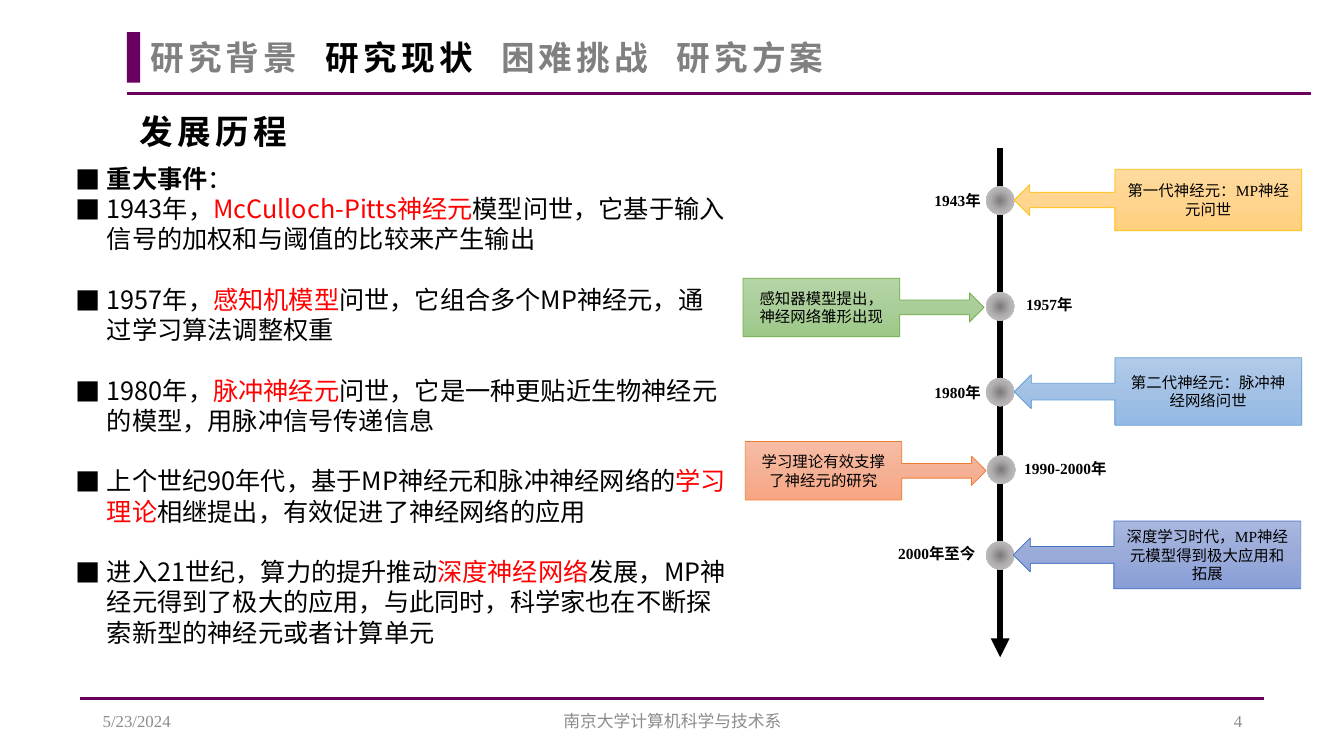
from lxml.etree import SubElement
from pptx import Presentation
from pptx.dml.color import RGBColor
from pptx.enum.shapes import MSO_CONNECTOR, MSO_SHAPE
from pptx.enum.text import MSO_ANCHOR, MSO_AUTO_SIZE, PP_ALIGN
from pptx.oxml import parse_xml
from pptx.oxml.ns import nsdecls, qn
from pptx.util import Emu, Pt

SCALE = 9144  # EMU in one px, at 100 px to the inch
SANS, SERIF = "Noto Sans CJK SC", "Times New Roman"
BLACK, GREY, RED, PLUM = "000000", "808080", "FF0000", "6A0160"
LEFT, MID, RIGHT = PP_ALIGN.LEFT, PP_ALIGN.CENTER, PP_ALIGN.RIGHT

TABS = ["研究背景", "研究现状", "困难挑战", "研究方案"]
ACTIVE = "研究现状"

# Each event: text before, red key words, text after
EVENTS = [
    ("1943年，", "McCulloch-Pitts神经元",
     "模型问世，它基于输入信号的加权和与阈值的比较来产生输出"),
    ("1957年，", "感知机模型", "问世，它组合多个MP神经元，通过学习算法调整权重"),
    ("1980年，", "脉冲神经元",
     "问世，它是一种更贴近生物神经元的模型，用脉冲信号传递信息"),
    ("上个世纪90年代，基于MP神经元和脉冲神经网络的", "学习理论",
     "相继提出，有效促进了神经网络的应用"),
    ("进入21世纪，算力的提升推动", "深度神经网络",
     "发展，MP神经元得到了极大的应用，与此同时，科学家也在不断探索新型的神经元或者计算单元"),
]

# Dot corner, year box, callout side and box, line colour, gradient, words
STAGES = [
    ((978, 185), "1943年", (917, 185, 66), "left", (1006, 168, 285, 61),
     "FFC000", ("FFDB9E", "FFD590", "FFD07C"), "第一代神经元：MP神经元问世"),
    ((978, 290), "1957年", (1008, 288, 66), "right", (737, 276, 239, 58),
     "70AD47", ("B5D5A7", "AACE9A", "9CC987"), "感知器模型提出，神经网络雏形出现"),
    ((978, 375), "1980年", (917, 375, 66), "left", (1006, 355, 285, 67),
     "5B9BD5", ("B1CBE9", "A3C1E5", "93B9E4"), "第二代神经元：脉冲神经网络问世"),
    ((979, 452), "1990-2000年", (1006, 451, 102), "right", (739, 438, 239, 58),
     "ED7D31", ("F7BDA5", "F5B196", "F8A582"), "学习理论有效支撑了神经元的研究"),
    ((978, 537), "2000年至今", (881, 535, 97), "left", (1005, 517, 285, 67),
     "4472C4", ("A8B7DF", "9AABD9", "889ED7"),
     "深度学习时代，MP神经元模型得到极大应用和拓展"),
]
CALLOUTS = {"left": MSO_SHAPE.LEFT_ARROW_CALLOUT,
            "right": MSO_SHAPE.RIGHT_ARROW_CALLOUT}


def px(*nums):
    return [Emu(n * SCALE) for n in nums]


def rgb(code):
    return RGBColor.from_string(code)


def place(shape, box):
    shape.left, shape.top, shape.width, shape.height = px(*box)


def setup(frame, anchor):
    frame.word_wrap = True
    frame.auto_size = MSO_AUTO_SIZE.NONE
    frame.vertical_anchor = anchor


def layout(para, size, align=LEFT, before=0):
    para.alignment = align
    para.line_spacing = Pt(size * 1.2)
    para.space_before = Pt(before)


def add_run(para, text, size, color=BLACK, bold=False, face=SERIF, gap=0):
    run = para.add_run()
    run.text = text
    font = run.font
    font.size, font.bold, font.name = Pt(size), bold, face
    font.color.rgb = rgb(color)
    props = run._r.get_or_add_rPr()
    SubElement(props, qn("a:ea"), typeface=SANS)
    if gap:
        props.set("spc", str(gap * 100))


def add_line(slide, start, end, color, width, arrow=False):
    line = slide.shapes.add_connector(
        MSO_CONNECTOR.STRAIGHT, *px(*start, *end))
    line.line.color.rgb = rgb(color)
    line.line.width = Pt(width)
    props = line._element.spPr
    if arrow:
        SubElement(props.find(qn("a:ln")), qn("a:tailEnd"), type="triangle")
    SubElement(props, qn("a:effectLst"))


def add_box(slide, kind, box):
    """Add a preset shape with no shadow and no line."""
    shape = slide.shapes.add_shape(kind, *px(*box))
    shape.shadow.inherit = False
    shape.line.fill.background()
    return shape


def blend(shape, colors, shade):
    """Fill a shape with evenly spaced colours, shaded as the XML tells."""
    step = 100000 // (len(colors) - 1)
    stops = "".join(
        f'<a:gs pos="{i * step}"><a:srgbClr val="{color}"/></a:gs>'
        for i, color in enumerate(colors))
    shape.fill.background()
    props = shape._element.spPr
    props.replace(props.find(qn("a:noFill")), parse_xml(
        f'<a:gradFill {nsdecls("a")} rotWithShape="1">'
        f"<a:gsLst>{stops}</a:gsLst>{shade}</a:gradFill>"))


def add_dot(slide, spot):
    dot = add_box(slide, MSO_SHAPE.OVAL, (*spot, 28, 28))
    blend(dot, ("7C7A7A", "B0AEAE", "D1CECE"),
          '<a:path path="circle"><a:fillToRect l="50000" t="50000" '
          'r="50000" b="50000"/></a:path>')


def add_callout(slide, side, box, edge, colors, words):
    shape = add_box(slide, CALLOUTS[side], box)
    blend(shape, colors, '<a:lin ang="5400000" scaled="0"/>')
    shape.line.color.rgb = rgb(edge)
    shape.line.width = Pt(0.5)
    setup(shape.text_frame, MSO_ANCHOR.MIDDLE)
    para = shape.text_frame.paragraphs[0]
    layout(para, 11, MID)
    add_run(para, words, 11)


def add_text(slide, box, text, size, align=LEFT, anchor=MSO_ANCHOR.MIDDLE,
             **style):
    frame = slide.shapes.add_textbox(*px(*box)).text_frame
    setup(frame, anchor)
    para = frame.paragraphs[0]
    layout(para, size, align)
    add_run(para, text, size, **style)


def fill_title(title):
    place(title, (139, 31, 1103, 51))
    setup(title.text_frame, MSO_ANCHOR.MIDDLE)
    para = title.text_frame.paragraphs[0]
    stops = SubElement(para._p.get_or_add_pPr(), qn("a:tabLst"))
    for i in range(1, len(TABS)):
        SubElement(stops, qn("a:tab"), pos=str(i * 174 * SCALE), algn="l")
    layout(para, 24)
    for i, name in enumerate(TABS):
        add_run(para, "\t" + name if i else name, 24,
                BLACK if name == ACTIVE else GREY, True, SANS, 3)


def add_item(para, before, runs):
    props = para._p.get_or_add_pPr()
    props.set("marL", str(31 * SCALE))
    props.set("indent", str(-31 * SCALE))
    SubElement(props, qn("a:buFont"), typeface=SANS)
    SubElement(props, qn("a:buChar"), char="■")
    layout(para, 18, before=before)
    for text, color, bold in runs:
        add_run(para, text, 18, color, bold, SANS)


def fill_list(body):
    place(body, (65, 157, 667, 495))
    frame = body.text_frame
    setup(frame, MSO_ANCHOR.TOP)
    add_item(frame.paragraphs[0], 0,
             [("重大事件", BLACK, True), ("：", BLACK, False)])
    for i, (head, key, rest) in enumerate(EVENTS):
        add_item(frame.add_paragraph(), 21.6 if i else 0,
                 [(head, BLACK, False), (key, RED, False),
                  (rest, BLACK, False)])


def main():
    deck = Presentation()
    deck.slide_width, deck.slide_height = px(1333, 750)
    slide = deck.slides.add_slide(deck.slide_layouts[1])
    title, body = slide.placeholders
    fill_title(title)
    fill_list(body)

    add_line(slide, (126, 93), (1300, 93), PLUM, 2.25)
    bar = add_box(slide, MSO_SHAPE.RECTANGLE, (126, 32, 13, 50))
    bar.fill.solid()
    bar.fill.fore_color.rgb = rgb(PLUM)
    add_line(slide, (79, 693), (1254, 693), PLUM, 2.25)
    add_text(slide, (129, 104, 1103, 51), "发展历程", 24,
             bold=True, face=SANS, gap=3)

    add_line(slide, (992, 147), (992, 652), BLACK, 4.5, arrow=True)
    for spot, year, (left, top, width), *callout in STAGES:
        add_dot(slide, spot)
        add_callout(slide, *callout)
        add_text(slide, (left, top, width, 29), year, 11,
                 anchor=MSO_ANCHOR.TOP, bold=True)

    for left, width, text, align in (
            (92, 300, "5/23/2024", LEFT),
            (442, 450, "南京大学计算机科学与技术系", MID),
            (942, 300, "4", RIGHT)):
        add_text(slide, (left, 695, width, 40), text, 12, align,
                 color="8C8C8C")
    deck.save("out.pptx")


if __name__ == "__main__":
    main()
